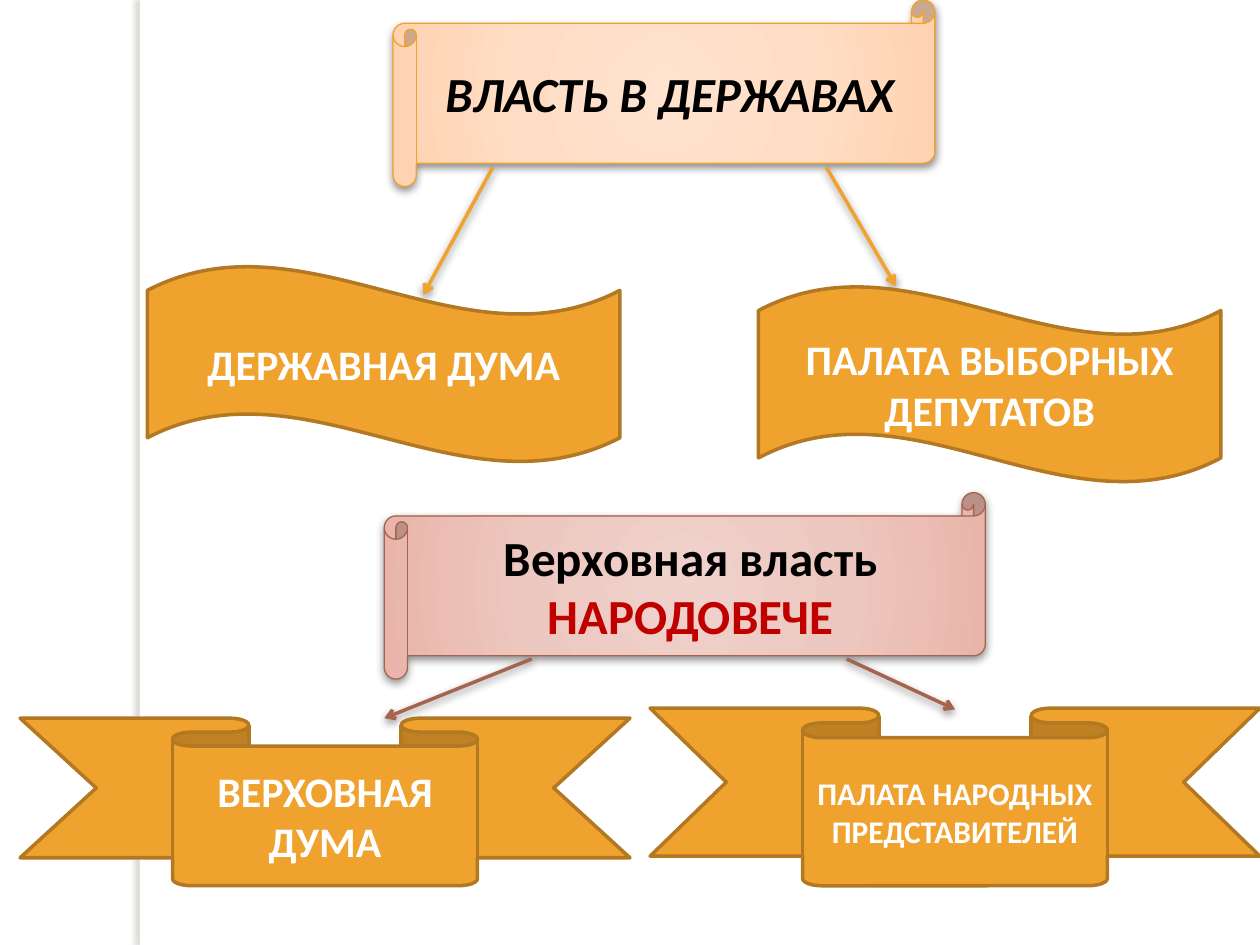
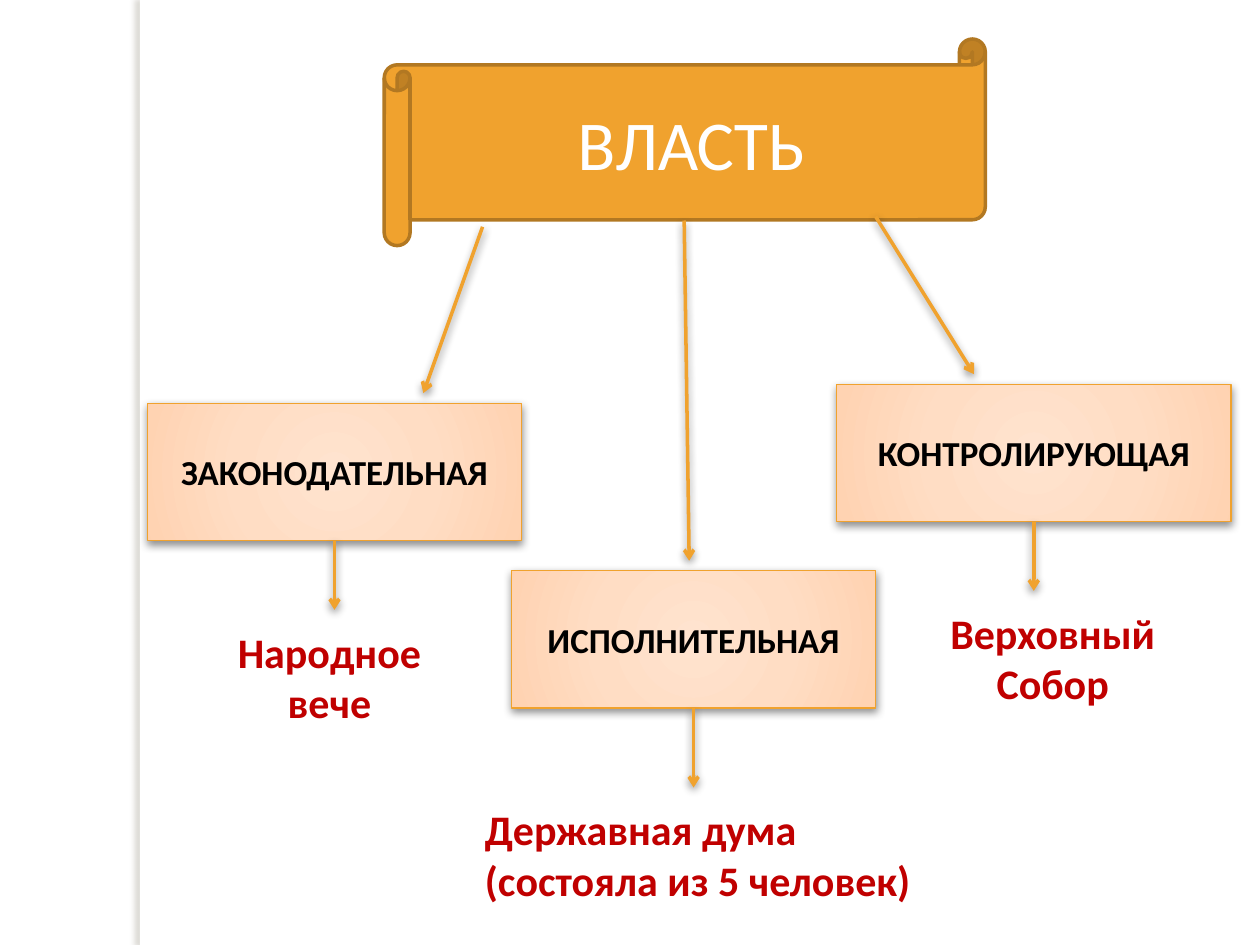
from dataclasses import dataclass

from pptx import Presentation
from pptx.dml.color import RGBColor
from pptx.enum.shapes import MSO_CONNECTOR, MSO_SHAPE as Preset
from pptx.enum.text import MSO_ANCHOR, MSO_AUTO_SIZE, PP_ALIGN
from pptx.oxml import parse_xml
from pptx.oxml.ns import nsdecls, qn
from pptx.util import Inches, Pt


@dataclass(frozen=True)
class Theme:
    font: str = "Calibri"
    white: str = "FFFFFF"
    black: str = "000000"
    red: str = "C00000"
    gold: str = "F0A22E"
    gold_edge: str = "B27822"
    brown: str = "A5644E"
    strip_shadow: str = "7E7763"
    peach: tuple = ("FFE3CF", "FFDDC4", "FFD3B2", "FFD1AC")
    rose: tuple = ("EFD2CC", "EDC8C0", "E9B5AA", "EAAFA2")
    stops: tuple = (0, 50, 97, 100)
    hero: int = 40
    heading: int = 28
    body: int = 24
    branch: int = 20
    small: int = 18
    thick: float = 2
    thin: float = 0.75


theme = Theme()
EFFECTS = (
    f'<a:effectLst {nsdecls("a")}><a:outerShdw blurRad="{{}}" dist="{{}}" dir="{{}}" '
    'algn="ctr" rotWithShape="0"><a:srgbClr val="{}"><a:alpha val="{}"/></a:srgbClr>'
    "</a:outerShdw></a:effectLst>"
)
SOFT_SHADOW = EFFECTS.format(Pt(5), Pt(2), 90 * 60000, theme.black, 43000)
STRIP_SHADOW = EFFECTS.format(Pt(3), Pt(3), 180 * 60000, theme.strip_shadow, 25000)


def add_box(slide, preset, place, fill, edge, lines, size, italic=False, bold=True,
            align=PP_ALIGN.CENTER):
    place = [Inches(length) for length in place]
    if preset is None:
        box = slide.shapes.add_textbox(*place)
        box.text_frame.auto_size = MSO_AUTO_SIZE.SHAPE_TO_FIT_TEXT
    else:
        box = slide.shapes.add_shape(preset, *place)
        box.shadow.inherit = False
        box.text_frame.vertical_anchor = MSO_ANCHOR.MIDDLE
        box.line.color.rgb = RGBColor.from_string(edge)
        properties = box.element.spPr
        if isinstance(fill, tuple):
            stops = "".join(
                f'<a:gs pos="{stop * 1000}"><a:srgbClr val="{color}"/></a:gs>'
                for stop, color in zip(theme.stops, fill))
            box.fill.gradient()
            properties.replace(properties.find(qn("a:gradFill")), parse_xml(
                f'<a:gradFill {nsdecls("a")} rotWithShape="1"><a:gsLst>{stops}</a:gsLst>'
                '<a:path path="circle"><a:fillToRect l="50000" t="50000" r="50000" b="50000"/>'
                "</a:path></a:gradFill>"))
            box.line.width = Pt(theme.thin)
            properties.replace(properties.find(qn("a:effectLst")), parse_xml(SOFT_SHADOW))
        else:
            box.fill.solid()
            box.fill.fore_color.rgb = RGBColor.from_string(fill)
            box.line.width = Pt(theme.thick)
    frame = box.text_frame
    frame.word_wrap = True
    frame.text = "\n".join(text for text, color in lines)
    for para, (text, color) in zip(frame.paragraphs, lines):
        para.alignment = align
        for span in para.runs:
            span.font.name = theme.font
            span.font.size = Pt(size)
            span.font.bold = bold
            span.font.italic = italic
            span.font.color.rgb = RGBColor.from_string(color)
    return box


def add_arrow(slide, start, end, color):
    arrow = slide.shapes.add_connector(
        MSO_CONNECTOR.STRAIGHT, *[Inches(length) for length in (*start, *end)])
    arrow.line.color.rgb = RGBColor.from_string(color)
    arrow.line.width = Pt(theme.thick)
    arrow.line._get_or_add_ln().append(parse_xml(f'<a:tailEnd {nsdecls("a")} type="arrow"/>'))
    arrow.element.spPr.append(parse_xml(SOFT_SHADOW))
    return arrow


deck = Presentation()
deck.slide_width, deck.slide_height = Inches(10), Inches(7.5)
blank = deck.slide_layouts[6]
powers = deck.slides.add_slide(blank)
branches = deck.slides.add_slide(blank)

strip = powers.shapes.add_shape(
    Preset.RECTANGLE, Inches(1.11), 0, Inches(0.08), deck.slide_height)
strip.fill.solid()
strip.fill.fore_color.rgb = RGBColor.from_string(theme.white)
strip.line.fill.background()
strip.element.spPr.append(parse_xml(STRIP_SHADOW))
strip.element.nvSpPr.cNvPr.id = 20
blank.shapes.element.append(strip.element)

add_box(powers, Preset.HORIZONTAL_SCROLL, (3.12, 0, 4.3, 1.48), theme.peach, theme.gold,
        [("ВЛАСТЬ В ДЕРЖАВАХ", theme.black)], theme.heading, italic=True)
add_box(powers, Preset.HORIZONTAL_SCROLL, (3.05, 3.91, 4.77, 1.48), theme.rose, theme.brown,
        [("Верховная власть", theme.black), ("НАРОДОВЕЧЕ", theme.red)], theme.heading)

for start, end, color in [
    ((3.91, 1.33), (3.36, 2.34), theme.gold),
    ((6.56, 1.33), (7.11, 2.27), theme.gold),
    ((4.22, 5.23), (3.05, 5.7), theme.brown),
    ((6.72, 5.23), (7.58, 5.63), theme.brown),
]:
    add_arrow(powers, start, end, color)

for preset, place, text, size in [
    (Preset.WAVE, (1.17, 2.11, 3.75, 1.56), "ДЕРЖАВНАЯ ДУМА", theme.body),
    (Preset.WAVE, (6.02, 2.27, 3.67, 1.56), "ПАЛАТА ВЫБОРНЫХ ДЕПУТАТОВ", theme.body),
    (Preset.DOWN_RIBBON, (0.16, 5.7, 4.84, 1.33), "ВЕРХОВНАЯ ДУМА", theme.body),
    (Preset.DOWN_RIBBON, (5.16, 5.62, 4.84, 1.41), "ПАЛАТА НАРОДНЫХ ПРЕДСТАВИТЕЛЕЙ",
     theme.small),
]:
    add_box(powers, preset, place, theme.gold, theme.gold_edge, [(text, theme.white)], size)

add_box(branches, Preset.HORIZONTAL_SCROLL, (3.05, 0.31, 4.77, 1.64), theme.gold,
        theme.gold_edge, [("ВЛАСТЬ", theme.white)], theme.hero, bold=False)

for branch, place, start, end, drop, body, body_place, align in [
    ("ЗАКОНОДАТЕЛЬНАЯ", (1.17, 3.2, 2.97, 1.09), (3.83, 1.8), (3.36, 3.12), 4.84,
     ["Народное вече"], (1.48, 4.92, 2.27, 0.91), PP_ALIGN.CENTER),
    ("ИСПОЛНИТЕЛЬНАЯ", (4.06, 4.53, 2.89, 1.09), (5.43, 1.75), (5.47, 4.45), 6.25,
     ["Державная дума", "(состояла из 5 человек)"], (3.75, 6.33, 3.75, 0.91), PP_ALIGN.LEFT),
    ("КОНТРОЛИРУЮЩАЯ", (6.64, 3.05, 3.13, 1.09), (6.95, 1.72), (7.73, 2.97), 4.69,
     ["Верховный Собор"], (7.34, 4.77, 2.03, 0.91), PP_ALIGN.CENTER),
]:
    add_arrow(branches, start, end, theme.gold)
    box = add_box(branches, Preset.RECTANGLE, place, theme.peach, theme.gold,
                  [(branch, theme.black)], theme.branch)
    left, top, width, height = place
    center = left + width / 2
    arrow = add_arrow(branches, (center, top + height), (center, drop), theme.gold)
    arrow.begin_connect(box, 2)
    add_box(branches, None, body_place, None, None,
            [(text, theme.red) for text in body], theme.body, align=align)

deck.save("out.pptx")
